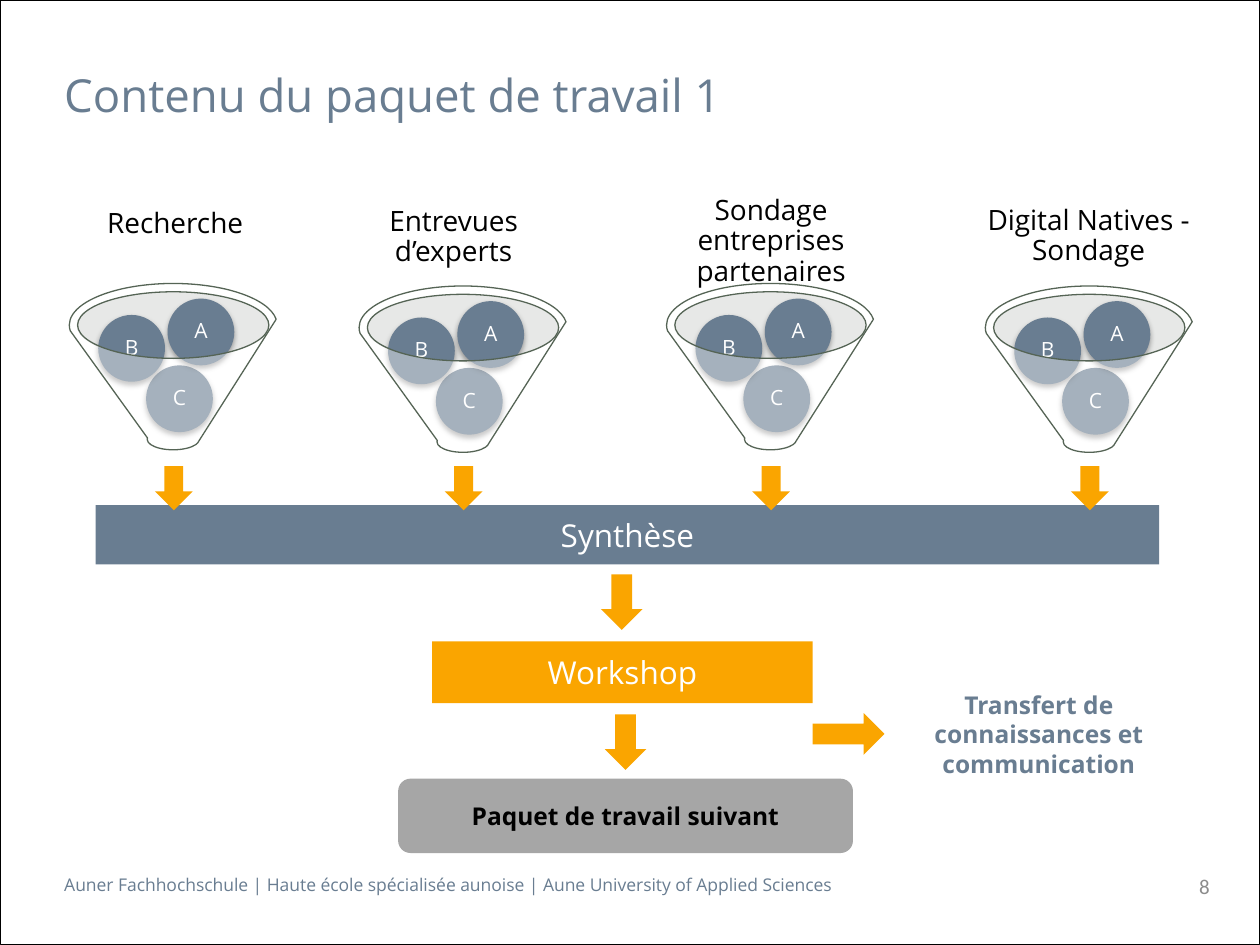
from lxml import etree
from pptx import Presentation
from pptx import util as u
from pptx.dml.color import RGBColor
from pptx.enum import shapes, text
from pptx.oxml.ns import qn

SLATE = RGBColor(0x69, 0x7D, 0x91)
ORANGE = RGBColor(0xFA, 0xA5, 0x00)
GREY = RGBColor(0xA6, 0xA6, 0xA6)
PALE = RGBColor(0xC3, 0xC6, 0xC3)
OUTLINE = RGBColor(0x55, 0x64, 0x55)
PAGE_GREY = RGBColor(0x8C, 0x8C, 0x8C)
WHITE = RGBColor(0xFF, 0xFF, 0xFF)
BLACK = RGBColor(0x00, 0x00, 0x00)

SHAPE = shapes.MSO_SHAPE
LEFT, CENTER, RIGHT = text.PP_ALIGN.LEFT, text.PP_ALIGN.CENTER, text.PP_ALIGN.RIGHT
TOP, MIDDLE = text.MSO_ANCHOR.TOP, text.MSO_ANCHOR.MIDDLE
FLAT = (0, 0.05)

# Funnel left, funnel top, heading, heading box
FUNNELS = [
    (0.55, 2.25, "Recherche", (0.68, 1.61, 1.42, 0.35)),
    (2.85, 2.27, "Entrevues d’experts", (2.89, 1.63, 1.42, 0.51)),
    (5.29, 2.25, "Sondage entreprises partenaires", (5.17, 1.63, 1.9, 0.58)),
    (7.82, 2.27, "Digital Natives - Sondage", (7.6, 1.63, 2.08, 0.5)),
]
# Ball letter and its offset inside a funnel
BALLS = [("C", 0.61, 0.65), ("B", 0.23, 0.25), ("A", 0.78, 0.12)]


def write(shape, words, size, color, align=CENTER, anchor=MIDDLE, insets=(0.1, 0.05),
          font="Open Sans", bold=False, spacing=None):
    frame = shape.text_frame
    frame.word_wrap = True
    frame.vertical_anchor = anchor
    frame.margin_left = frame.margin_right = u.Inches(insets[0])
    frame.margin_top = frame.margin_bottom = u.Inches(insets[1])
    paragraph = frame.paragraphs[0]
    paragraph.alignment = align
    if spacing:
        paragraph.line_spacing = spacing
    run = paragraph.add_run()
    run.text = words
    run.font.name = font
    run.font.size = u.Pt(size)
    run.font.bold = bold
    run.font.color.rgb = color


def add_text(slide, box, *args, **options):
    shape = slide.shapes.add_textbox(*map(u.Inches, box))
    write(shape, *args, **options)


def add_shape(slide, kind, box, fill=None, opacity=None, line=None, width=0.75):
    shape = slide.shapes.add_shape(kind, *map(u.Inches, box))
    shape.shadow.inherit = False
    if fill is None:
        shape.fill.background()
    else:
        shape.fill.solid()
        shape.fill.fore_color.rgb = fill
    if opacity is not None:
        color = shape.fill._xPr.find(".//" + qn("a:srgbClr"))
        etree.SubElement(color, qn("a:alpha"), val=str(opacity * 1000))
    if line is None:
        shape.line.fill.background()
    else:
        shape.line.color.rgb = line
        shape.line.width = u.Pt(width)
    return shape


def add_soft_shadow(shape):
    effects = shape._element.spPr.find(qn("a:effectLst"))
    shadow = etree.SubElement(effects, qn("a:outerShdw"), blurRad=str(u.Pt(3.1)),
                              dist=str(u.Pt(1.8)), dir="5400000", rotWithShape="0")
    color = etree.SubElement(shadow, qn("a:srgbClr"), val="000000")
    etree.SubElement(color, qn("a:alpha"), val="35000")


def add_frame(slide, width, height):
    # Footer, page border and page number
    add_text(slide, (0.51, 6.89, 7.31, 0.27),
             "Auner Fachhochschule | Haute école spécialisée aunoise | "
             "Aune University of Applied Sciences",
             10, SLATE, align=LEFT, anchor=TOP, insets=FLAT)
    add_shape(slide, SHAPE.RECTANGLE, (0, 0, width, height), line=BLACK, width=0.5)
    add_text(slide, (6.7, 6.83, 3, 0.4), "8", 12, PAGE_GREY, align=RIGHT, font="Calibri")
    # Title
    add_text(slide, (0.51, 0.48, 8.86, 0.59), "Contenu du paquet de travail 1",
             26, SLATE, align=LEFT, anchor=TOP, insets=FLAT)


def add_funnel(slide, left, top, heading, heading_box):
    # Mouth and outgoing arrow
    add_shape(slide, SHAPE.OVAL, (left + 0.06, top + 0.07, 1.52, 0.53), PALE, opacity=40)
    add_shape(slide, SHAPE.DOWN_ARROW, (left + 0.68, 3.7, 0.3, 0.35), ORANGE)
    add_text(slide, heading_box, heading, 16, BLACK, insets=(0.12, 0.12), spacing=0.9)
    # Balls inside the funnel
    for letter, dx, dy in BALLS:
        ball = add_shape(slide, SHAPE.OVAL, (left + dx, top + dy, 0.53, 0.53), SLATE)
        add_soft_shadow(ball)
        write(ball, letter, 12, WHITE, insets=(0.02, 0.02), spacing=0.9)
    # Translucent funnel over the balls
    add_shape(slide, SHAPE.FUNNEL, (left, top, 1.65, 1.32), WHITE, opacity=40, line=OUTLINE)


def add_steps(slide):
    # Workshop and next work package
    workshop = add_shape(slide, SHAPE.RECTANGLE, (3.43, 5.09, 3.02, 0.49), ORANGE)
    write(workshop, "Workshop", 18, WHITE)
    transfer = add_shape(slide, SHAPE.ROUNDED_RECTANGLE, (7.12, 5.53, 2.25, 0.59), WHITE)
    write(transfer, "Transfert de connaissances et communication", 14, SLATE,
          insets=FLAT, bold=True)
    following = add_shape(slide, SHAPE.ROUNDED_RECTANGLE, (3.16, 6.18, 3.61, 0.59), GREY)
    write(following, "Paquet de travail suivant", 14, BLACK, insets=FLAT, bold=True)
    # Arrows between the steps
    for left, top, height, rotation in [(4.77, 4.56, 0.44, 0), (4.8, 5.67, 0.44, 0),
                                        (6.57, 5.54, 0.57, 270)]:
        arrow = add_shape(slide, SHAPE.DOWN_ARROW, (left, top, 0.33, height), ORANGE)
        arrow.rotation = rotation


def main():
    presentation = Presentation()
    presentation.slide_width = u.Inches(10)
    presentation.slide_height = u.Inches(7.5)
    slide = presentation.slides.add_slide(presentation.slide_layouts[6])
    add_frame(slide, 10, 7.5)
    synthesis = add_shape(slide, SHAPE.RECTANGLE, (0.76, 4.01, 8.44, 0.47), SLATE)
    write(synthesis, "Synthèse", 18, WHITE)
    for funnel in FUNNELS:
        add_funnel(slide, *funnel)
    add_steps(slide)
    presentation.save("out.pptx")


if __name__ == "__main__":
    main()
